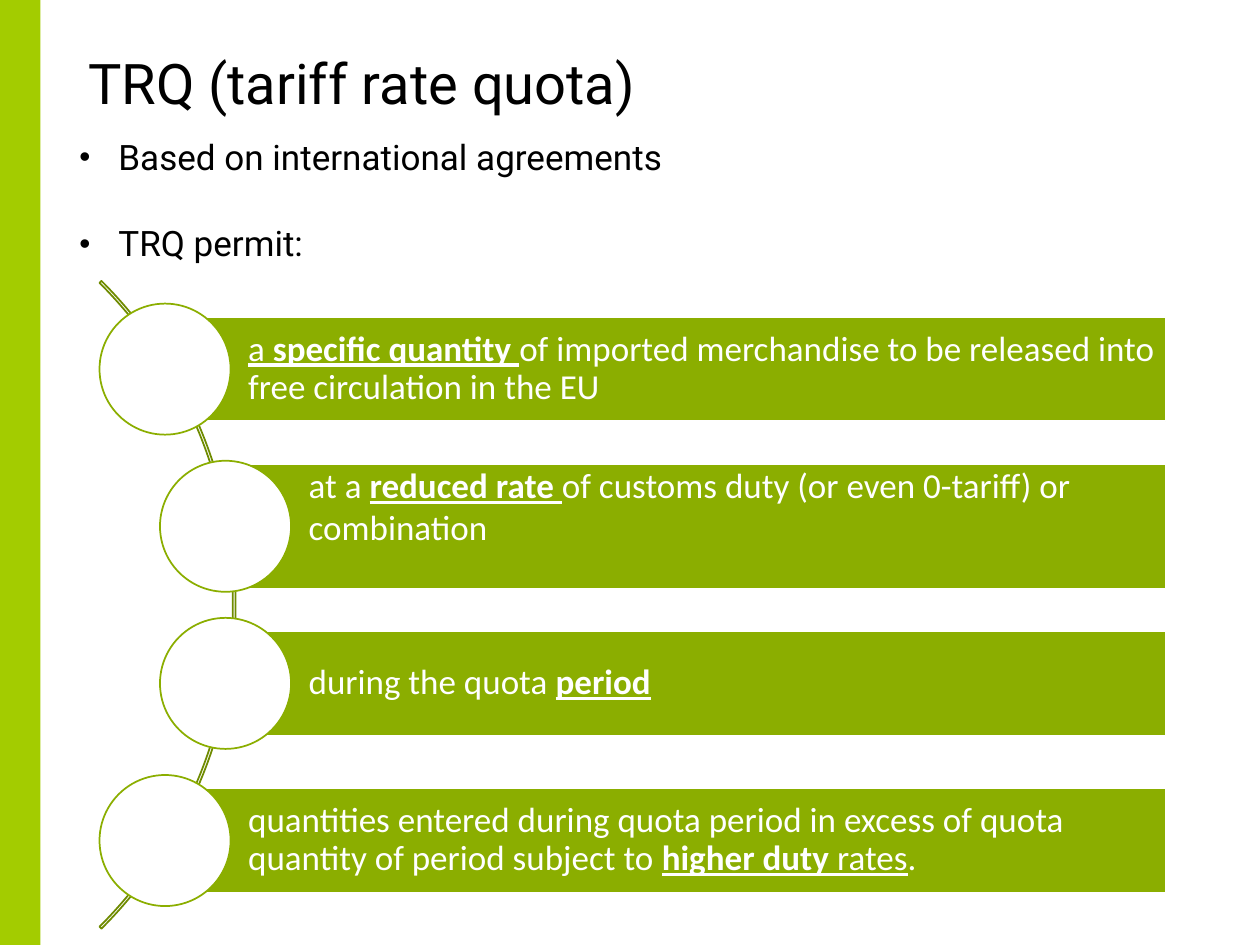
from lxml import etree
from pptx import Presentation
from pptx.dml.color import RGBColor
from pptx.enum.shapes import MSO_SHAPE
from pptx.enum.text import MSO_ANCHOR, PP_ALIGN
from pptx.oxml.ns import qn
from pptx.util import Inches, Pt

RECTANGLE, ELLIPSE, BLOCK_ARC = MSO_SHAPE.RECTANGLE, MSO_SHAPE.OVAL, MSO_SHAPE.BLOCK_ARC
MIDDLE, TOP = MSO_ANCHOR.MIDDLE, MSO_ANCHOR.TOP
LEFT = PP_ALIGN.LEFT

COLORS = {
    "side": "A3CC00",
    "bar": "8BAE00",
    "arc": "6F8B00",
    "white": "FFFFFF",
    "black": "000000",
}
HEADING_FONT, BAR_FONT = "Roboto", "Calibri"

SLIDE_W, SLIDE_H = 10, 7.5
CIRCLE = 1.04
BAR_RIGHT = 9.25
FIRST_ROW, ROW_STEP = 2.93, 1.247  # centre of the first row, distance between rows
COLUMNS = (1.31, 1.79)  # centres of the outer and inner circles
ARC_SIZE, ARC_LEFT = 7.27, -5.4

# Each row: column, bar height, line spacing, anchor, runs of (text, style);
# "b" in a style is bold and "u" underlined.
ROWS = [
    (0, 0.83, 0.9, MIDDLE, [
        ("a ", "u"), ("specific quantity ", "bu"),
        ("of imported merchandise to be released into free circulation in the EU", "")]),
    (1, 0.99, 1.0, TOP, [
        ("at a ", ""), ("reduced rate ", "bu"),
        ("of customs duty (or even 0-tariff) or combination", "")]),
    (1, 0.83, 0.9, MIDDLE, [("during the quota ", ""), ("period", "bu")]),
    (0, 0.83, 0.9, MIDDLE, [
        ("quantities entered during quota period in excess of quota "
         "quantity of period subject to ", ""),
        ("higher duty", "bu"), (" rates", "u"), (".", "")]),
]


def rgb(name):
    return RGBColor.from_string(COLORS[name])


def set_font(paragraph, face, size, color):
    font = paragraph.font
    font.name, font.size = face, Pt(size)
    font.color.rgb = rgb(color)


def set_insets(frame, left=0, top=0, right=0, bottom=0):
    frame.margin_left, frame.margin_top = Inches(left), Inches(top)
    frame.margin_right, frame.margin_bottom = Inches(right), Inches(bottom)


def add_figure(slide, kind, box, fill=None, line=None):
    figure = slide.shapes.add_shape(kind, *map(Inches, box))
    figure.shadow.inherit = False
    if fill:
        figure.fill.solid()
        figure.fill.fore_color.rgb = rgb(fill)
    else:
        figure.fill.background()
    if line:
        figure.line.color.rgb = rgb(line)
        figure.line.width = Pt(1)
    else:
        figure.line.fill.background()
    return figure


def add_text_frame(slide, box):
    frame = slide.shapes.add_textbox(*map(Inches, box)).text_frame
    frame.word_wrap = True
    set_insets(frame)
    return frame


def add_title(slide, text):
    title = add_text_frame(slide, (0.7, 0.39, 8.95, 0.6)).paragraphs[0]
    title.text = text
    title.line_spacing = Pt(38)
    set_font(title, HEADING_FONT, 32, "black")


def add_bullets(slide, points):
    frame = add_text_frame(slide, (0.63, 1.11, 9.15, 1.05))
    for index, point in enumerate(points):
        paragraph = frame.add_paragraph() if index else frame.paragraphs[0]
        paragraph.text = point
        paragraph.line_spacing = 0.9
        if index:
            paragraph.space_before = Pt(28)
        properties = paragraph._p.get_or_add_pPr()
        properties.set("marL", str(Inches(0.31)))
        properties.set("indent", str(-Inches(0.31)))
        etree.SubElement(properties, qn("a:buSzPct"), val="90000")
        etree.SubElement(properties, qn("a:buFont"), typeface="Arial")
        etree.SubElement(properties, qn("a:buChar"), char="•")
        set_font(paragraph, HEADING_FONT, 20, "black")


def add_arc(slide):
    """Draw the thin curve that runs behind the circles."""
    middle = FIRST_ROW + ROW_STEP * (len(ROWS) - 1) / 2
    arc = add_figure(slide, BLOCK_ARC,
                     (ARC_LEFT, middle - ARC_SIZE / 2, ARC_SIZE, ARC_SIZE), line="arc")
    for index, value in enumerate((189, 27, 0.003)):
        arc.adjustments[index] = value


def add_row(slide, center_y, column, height, spacing, anchor, runs):
    center_x = COLUMNS[column]
    bar = add_figure(slide, RECTANGLE,
                     (center_x, center_y - height / 2, BAR_RIGHT - center_x, height),
                     "bar", "white")
    frame = bar.text_frame
    frame.word_wrap = True
    frame.vertical_anchor = anchor
    set_insets(frame, 0.66, 0 if anchor == TOP else 0.06, 0.06, 0.06)
    paragraph = frame.paragraphs[0]
    paragraph.alignment = LEFT
    paragraph.line_spacing = spacing
    set_font(paragraph, BAR_FONT, 20, "white")
    for text, style in runs:
        run = paragraph.add_run()
        run.text = text
        if "b" in style:
            run.font.bold = True
        if "u" in style:
            run.font.underline = True
    add_figure(slide, ELLIPSE,
               (center_x - CIRCLE / 2, center_y - CIRCLE / 2, CIRCLE, CIRCLE),
               "white", "bar")


def main():
    deck = Presentation()
    deck.slide_width, deck.slide_height = Inches(SLIDE_W), Inches(SLIDE_H)
    slide = deck.slides.add_slide(deck.slide_layouts[6])
    add_figure(slide, RECTANGLE, (0, 0, 0.32, SLIDE_H), "side")
    add_title(slide, "TRQ (tariff rate quota)")
    add_bullets(slide, ["Based on international agreements", "TRQ permit:"])
    add_arc(slide)
    for index, row in enumerate(ROWS):
        add_row(slide, FIRST_ROW + index * ROW_STEP, *row)
    deck.save("out.pptx")


if __name__ == "__main__":
    main()
